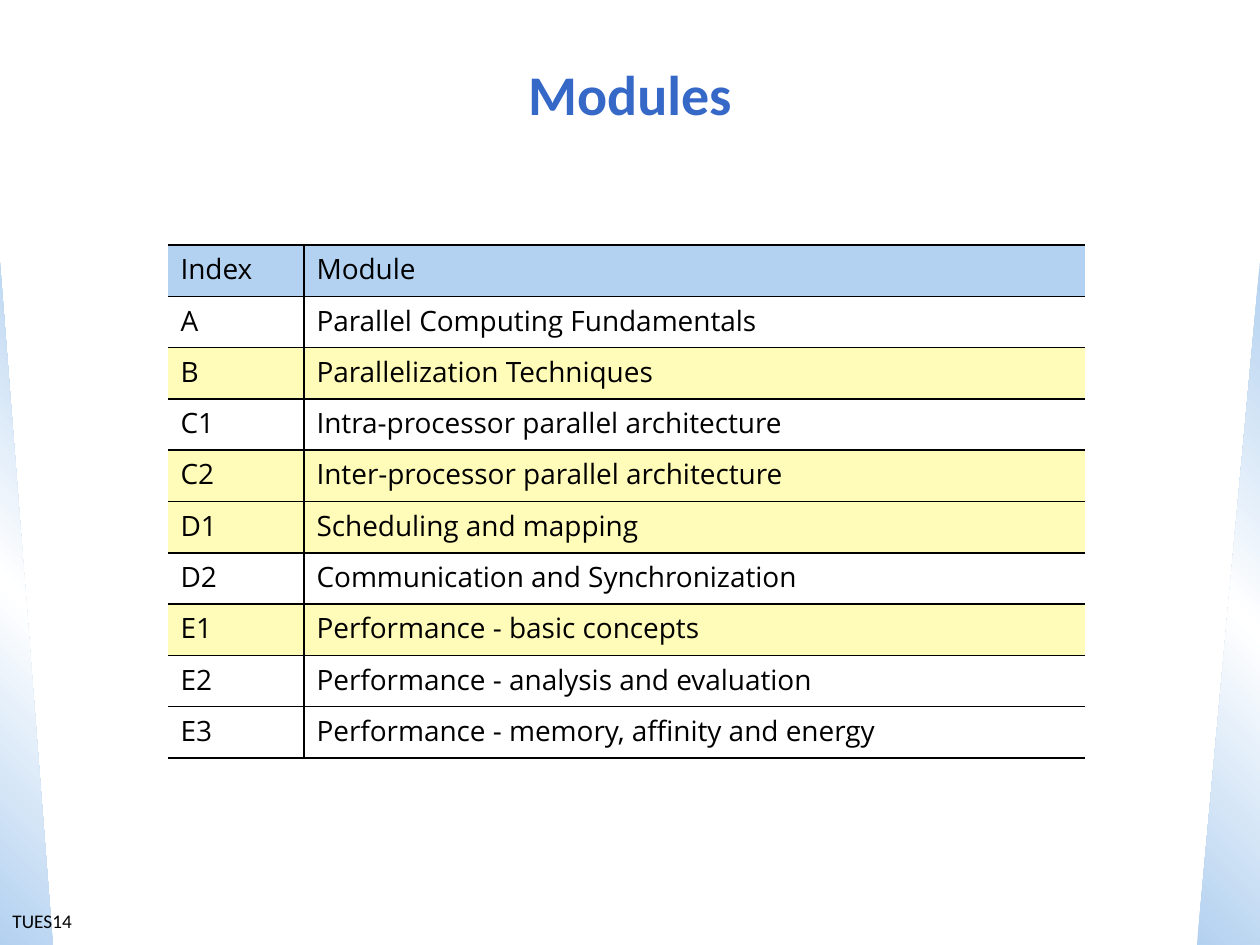
from copy import deepcopy
from dataclasses import dataclass

from lxml import etree
from pptx import Presentation
from pptx import util as u
from pptx.dml.color import RGBColor
from pptx.enum import shapes, text
from pptx.oxml import ns

PX = 914400 / 126  # EMU in one px


def px(length):
    return u.Emu(round(length * PX))


@dataclass(frozen=True)
class Theme:
    title: str = "3568C7"
    ink: str = "000000"
    paper: str = "FFFFFF"
    sky: str = "B3D1F0"
    highlight: str = "FFFBB8"
    heading_font: str = "Calibri"
    table_font: str = "Open Sans"
    title_size: int = 32
    table_size: int = 16
    footer_size: int = 11
    rule_width: int = 1


class Builder:
    def __init__(self, slide, theme):
        self.slide = slide
        self.theme = theme

    def format(self, paragraph, font_name, size, color, bold=False):
        for run in paragraph.runs:
            run.font.name = font_name
            run.font.size = u.Pt(size)
            run.font.bold = bold
            run.font.color.rgb = RGBColor.from_string(color)

    def label(self, words, box, size, color, bold=False,
              align=text.PP_ALIGN.LEFT, anchor=text.MSO_ANCHOR.TOP):
        frame = self.slide.shapes.add_textbox(*map(px, box)).text_frame
        frame.word_wrap = True
        frame.vertical_anchor = anchor
        frame.text = words
        frame.paragraphs[0].alignment = align
        self.format(frame.paragraphs[0], self.theme.heading_font, size, color, bold)

    def wedge(self, box, angle, flipped=False):
        """Right triangle with a sky - paper - sky gradient."""
        wedge = self.slide.shapes.add_shape(
            shapes.MSO_SHAPE.RIGHT_TRIANGLE, *map(px, box))
        wedge.shadow.inherit = False
        wedge.line.fill.background()
        if flipped:
            wedge._element.spPr.find(ns.qn("a:xfrm")).set("flipH", "1")
        wedge.fill.gradient()
        wedge.fill.gradient_angle = angle
        stop_list = wedge._element.spPr.find(".//" + ns.qn("a:gsLst"))
        stop_list.insert(1, deepcopy(stop_list[0]))
        colors = (self.theme.sky, self.theme.paper, self.theme.sky)
        for i, (stop, color) in enumerate(zip(wedge.fill.gradient_stops, colors)):
            stop.position = i / 2
            stop.color.rgb = RGBColor.from_string(color)

    def borders(self, cell, visible):
        properties = cell._tc.get_or_add_tcPr()
        for side in "LRTB":
            line = etree.SubElement(properties, ns.qn("a:ln" + side),
                                    w=str(u.Pt(self.theme.rule_width)))
            if side in visible:
                fill = etree.SubElement(line, ns.qn("a:solidFill"))
                etree.SubElement(fill, ns.qn("a:srgbClr"), val=self.theme.ink)
            else:
                etree.SubElement(line, ns.qn("a:noFill"))

    def table(self, rows, box, widths, row_fills):
        table = self.slide.shapes.add_table(
            len(rows), len(widths), *map(px, box)).table
        table.first_row = table.horz_banding = False
        for column, width in zip(table.columns, widths):
            column.width = px(width)
        for r, (row, color) in enumerate(zip(rows, row_fills)):
            for c, words in enumerate(row):
                cell = table.cell(r, c)
                cell.margin_top = cell.margin_bottom = px(5)
                cell.text = words
                self.format(cell.text_frame.paragraphs[0], self.theme.table_font,
                            self.theme.table_size, self.theme.ink)
                self.borders(cell, "RTB" if c == 0 else "LTB")
                if color:
                    cell.fill.solid()
                    cell.fill.fore_color.rgb = RGBColor.from_string(color)
                else:
                    cell.fill.background()


MODULES = [
    ("A", "Parallel Computing Fundamentals"),
    ("B", "Parallelization Techniques"),
    ("C1", "Intra-processor parallel architecture"),
    ("C2", "Inter-processor parallel architecture"),
    ("D1", "Scheduling and mapping"),
    ("D2", "Communication and Synchronization"),
    ("E1", "Performance - basic concepts"),
    ("E2", "Performance - analysis and evaluation"),
    ("E3", "Performance - memory, affinity and energy"),
]
HIGHLIGHTED = {"B", "C2", "D1", "E1"}


def main():
    deck = Presentation()
    deck.slide_width, deck.slide_height = px(1260), px(945)
    theme = Theme()
    builder = Builder(deck.slides.add_slide(deck.slide_layouts[6]), theme)

    # Side decoration
    builder.wedge((0, 262, 53, 683), 45)
    builder.wedge((1197, 262, 63, 683), 315, flipped=True)

    # Title
    builder.label("Modules", (63, 38, 1134, 110), theme.title_size, theme.title,
                  bold=True, align=text.PP_ALIGN.CENTER,
                  anchor=text.MSO_ANCHOR.MIDDLE)

    # Module table
    row_fills = [theme.sky] + [
        theme.highlight if index in HIGHLIGHTED else None for index, _ in MODULES]
    builder.table([("Index", "Module")] + MODULES, (168, 245, 917, 513),
                  (136, 781), row_fills)

    # Footer
    builder.label("TUES14", (0, 903, 168, 42), theme.footer_size, theme.ink)

    deck.save("out.pptx")


if __name__ == "__main__":
    main()
